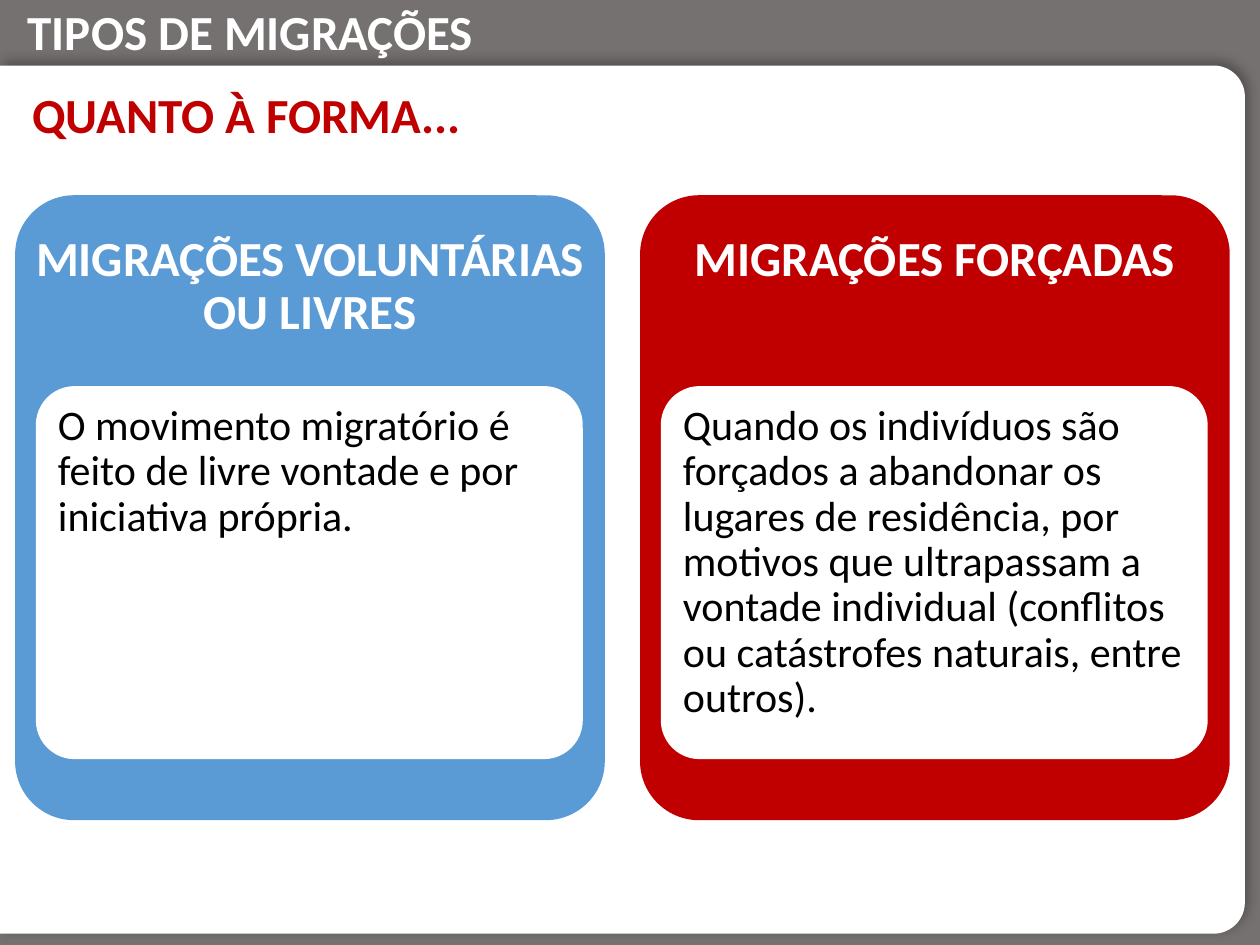
import pptx
import pptx.util
import pptx.dml.color
import pptx.enum.shapes
import pptx.enum.text
import pptx.oxml
import pptx.oxml.ns

Inches = pptx.util.Inches
RGBColor = pptx.dml.color.RGBColor
SHAPE = pptx.enum.shapes.MSO_SHAPE
ALIGN = pptx.enum.text.PP_ALIGN
ANCHOR = pptx.enum.text.MSO_ANCHOR

WHITE = RGBColor(0xFF, 0xFF, 0xFF)
BLACK = RGBColor(0, 0, 0)
GRAY = RGBColor(0x76, 0x71, 0x71)
BLUE = RGBColor(0x5B, 0x9B, 0xD5)
RED = RGBColor(0xC0, 0, 0)


def add_block(shapes, kind, box, color=None):
    block = shapes.add_shape(kind, *map(Inches, box))
    block.shadow.inherit = False
    block.line.fill.background()
    if color is None:
        block.fill.background()
    else:
        block.fill.solid()
        block.fill.fore_color.rgb = color
    return block


def write(holder, text, size, color, bold=True, align=ALIGN.LEFT, spacing=1.0,
          anchor=ANCHOR.TOP, insets=(0.1, 0.05, 0.1, 0.05)):
    """Fill a shape's text frame; insets run left, top, right, bottom, in inches."""
    frame = holder.text_frame
    frame.text = text
    frame.word_wrap = True
    frame.auto_size = pptx.enum.text.MSO_AUTO_SIZE.NONE
    frame.vertical_anchor = anchor
    for side, inset in zip(("left", "top", "right", "bottom"), insets):
        setattr(frame, f"margin_{side}", Inches(inset))
    paragraph = frame.paragraphs[0]
    paragraph.alignment = align
    paragraph.line_spacing = spacing
    font = paragraph.runs[0].font
    formats = {"name": "Calibri", "size": pptx.util.Pt(size), "bold": bold}
    for attribute, value in formats.items():
        setattr(font, attribute, value)
    font.color.rgb = color


prs = pptx.Presentation()
prs.slide_width, prs.slide_height = Inches(10), Inches(7.5)
slide = prs.slides.add_slide(prs.slide_layouts[5])
shapes = slide.shapes

# Gray frame and white page, rounded on its right side only
add_block(shapes, SHAPE.RECTANGLE, (0, 0, 10, 7.5), GRAY)
page_left, page_top, page_width, page_height = 0, 0.52, 9.88, 6.89
turn = (page_width - page_height) / 2
page = add_block(shapes, SHAPE.ROUND_2_SAME_RECTANGLE,
                 (page_left + turn, page_top - turn, page_height, page_width), WHITE)
page.rotation = 90
page.adjustments[0] = 0.036
effects = page._element.spPr.find(pptx.oxml.ns.qn("a:effectLst"))
effects.append(pptx.oxml.parse_xml(
    f'<a:outerShdw {pptx.oxml.ns.nsdecls("a")} blurRad="88900" dist="38100" '
    'dir="18900000" rotWithShape="0"><a:srgbClr val="000000">'
    '<a:alpha val="30000"/></a:srgbClr></a:outerShdw>'))

# Title, brought in front of the frame
title = shapes.title
title.left, title.top, title.width, title.height = map(Inches, (0.12, -0.04, 9.37, 0.57))
write(title, "TIPOS DE MIGRAÇÕES", 28, WHITE)
shapes._spTree.append(title._element)

subtitle = add_block(shapes, SHAPE.ROUNDED_RECTANGLE, (0.12, 0.52, 7.87, 0.77))
write(subtitle, "QUANTO À FORMA...", 28, RED, anchor=ANCHOR.MIDDLE)

# One card for each form of migration
CARDS = [
    ("MIGRAÇÕES VOLUNTÁRIAS OU LIVRES", BLUE,
     "O movimento migratório é feito de livre vontade e por iniciativa própria."),
    ("MIGRAÇÕES FORÇADAS", RED,
     "Quando os indivíduos são forçados a abandonar os lugares de residência, "
     "por motivos que ultrapassam a vontade individual (conflitos ou "
     "catástrofes naturais, entre outros)."),
]
for index, (heading, color, description) in enumerate(CARDS):
    left = 0.12 + index * 4.96
    card = shapes.add_group_shape().shapes

    outer = add_block(card, SHAPE.ROUNDED_RECTANGLE, (left, 1.55, 4.68, 4.96), color)
    outer.adjustments[0] = 0.1
    heading_box = card.add_textbox(*map(Inches, (left, 1.55, 4.68, 1.49)))
    write(heading_box, heading, 28, WHITE, align=ALIGN.CENTER, spacing=0.9,
          insets=(0.12, 0.31, 0.12, 0.12))

    inner = add_block(card, SHAPE.ROUNDED_RECTANGLE, (left + 0.18, 3.08, 4.31, 2.93), WHITE)
    inner.adjustments[0] = 0.1
    inner.line.color.rgb = WHITE
    inner.line.width = pptx.util.Pt(2.25)
    description_box = card.add_textbox(*map(Inches, (left + 0.27, 3.16, 4.14, 2.76)))
    write(description_box, description, 24, BLACK, bold=False, spacing=0.9,
          insets=(0.07, 0.05, 0.07, 0.05))

prs.save("out.pptx")
